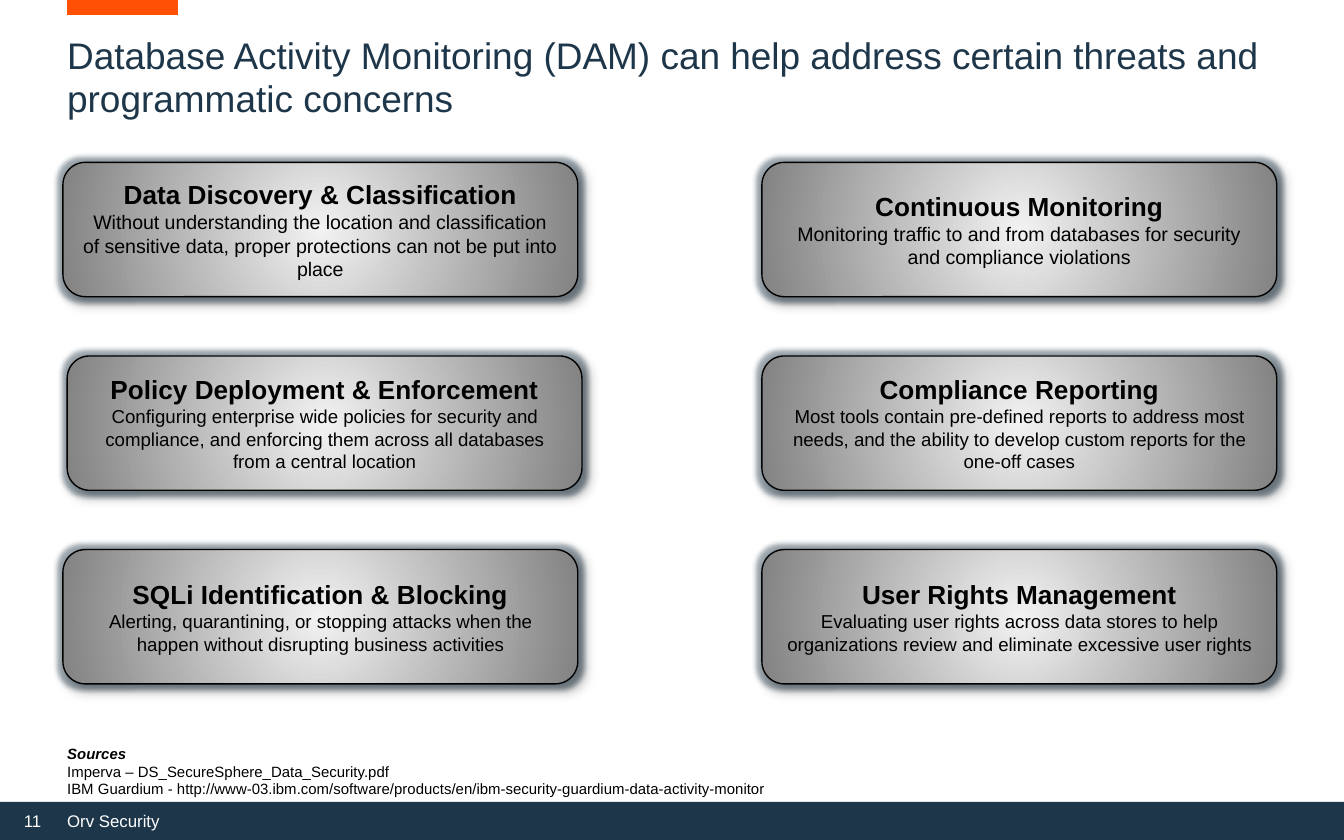
from lxml import etree
from pptx import Presentation
from pptx.dml.color import RGBColor
from pptx.enum.shapes import MSO_CONNECTOR, MSO_SHAPE
from pptx.enum.text import MSO_ANCHOR, PP_ALIGN
from pptx.oxml import parse_xml
from pptx.oxml.ns import nsdecls, qn
from pptx.util import Cm, Pt

NAVY = RGBColor(0x1D, 0x36, 0x49)
ORANGE = RGBColor(0xFF, 0x50, 0x04)
BLACK = RGBColor(0x00, 0x00, 0x00)
WHITE = RGBColor(0xFF, 0xFF, 0xFF)
CARD_CENTRE = RGBColor(0xF2, 0xF2, 0xF2)
CARD_EDGE = RGBColor(0x82, 0x82, 0x82)

LEFT_MARGIN = 1.27
CARD_TOP, CARD_PITCH = 3.07, 3.66
CARD_WIDTH, CARD_HEIGHT = 9.73, 2.54
RIGHT_COLUMN = 14.4

CARD_ROWS = [
    [
        (1.19, "Data Discovery & Classification",
         "Without understanding the location and classification of sensitive data, "
         "proper protections can not be put into place", 10.5),
        (RIGHT_COLUMN, "Continuous Monitoring",
         "Monitoring traffic to and from databases for security and compliance violations", 10.5),
    ],
    [
        (LEFT_MARGIN, "Policy Deployment & Enforcement",
         "Configuring enterprise wide policies for security and compliance, and enforcing "
         "them across all databases from a central location", 10),
        (RIGHT_COLUMN, "Compliance Reporting",
         "Most tools contain pre-defined reports to address most needs, and the ability "
         "to develop custom reports for the one-off cases", 10),
    ],
    [
        (1.19, "SQLi Identification & Blocking",
         "Alerting, quarantining, or stopping attacks when the happen without disrupting "
         "business activities", 10),
        (RIGHT_COLUMN, "User Rights Management",
         "Evaluating user rights across data stores to help organizations review and "
         "eliminate excessive user rights", 10),
    ],
]

SOURCES = [
    "Imperva – DS_SecureSphere_Data_Security.pdf",
    "IBM Guardium - http://www-03.ibm.com/software/products/en/"
    "ibm-security-guardium-data-activity-monitor",
]


def write(frame, text, size, color=BLACK, bold=False, italic=False,
          align=PP_ALIGN.LEFT, spacing=None, tabs=()):
    """Write one formatted paragraph, using the frame's empty first one if it is free."""
    first = frame.paragraphs[0]
    paragraph = frame.add_paragraph() if first.runs else first
    if tabs:
        tab_list = etree.SubElement(paragraph._p.get_or_add_pPr(), qn("a:tabLst"))
        for position, side in tabs:
            etree.SubElement(tab_list, qn("a:tab"), pos=str(Cm(position)), algn=side)
    paragraph.alignment = align
    paragraph.line_spacing = spacing
    run = paragraph.add_run()
    run.text = text
    run.font.name = "Arial"
    run.font.size = Pt(size)
    run.font.bold = bold
    run.font.italic = italic
    run.font.color.rgb = color


def add_text_area(slide, left, top, width, height, wrap=True, anchor=MSO_ANCHOR.TOP):
    """Add a text box without insets and return its frame."""
    frame = slide.shapes.add_textbox(Cm(left), Cm(top), Cm(width), Cm(height)).text_frame
    frame.margin_left = frame.margin_right = frame.margin_top = frame.margin_bottom = 0
    frame.word_wrap = wrap
    frame.vertical_anchor = anchor
    return frame


def add_footer(slide):
    """Add the dark footer bar with page number and department."""
    bar = slide.shapes.add_shape(MSO_SHAPE.RECTANGLE, 0, Cm(15.16), Cm(25.4), Cm(0.72))
    bar.shadow.inherit = False
    bar.fill.solid()
    bar.fill.fore_color.rgb = NAVY
    bar.line.fill.background()
    label = add_text_area(slide, 0.3, 15.21, 4.85, 0.51, False, MSO_ANCHOR.BOTTOM)
    write(label, "\t11\tOrv Security", 9, WHITE, spacing=0.9,
          tabs=[(0.48, "r"), (0.97, "l")])


def add_accent(slide):
    """Add the thick orange line at the top edge."""
    accent = slide.shapes.add_connector(
        MSO_CONNECTOR.STRAIGHT, Cm(LEFT_MARGIN), Cm(0.14), Cm(3.37), Cm(0.14))
    accent.line.color.rgb = ORANGE
    accent.line.width = Pt(8)
    etree.SubElement(accent._element.spPr, qn("a:effectLst"))


def style_card(card):
    """Give a card its radial fill, outline, glow and shadow."""
    card.shadow.inherit = False
    card.line.color.rgb = BLACK
    card.line.width = Pt(0.75)
    properties = card._element.spPr
    properties.find(qn("a:prstGeom")).addnext(parse_xml(
        f'<a:gradFill {nsdecls("a")} rotWithShape="1"><a:gsLst>'
        f'<a:gs pos="0"><a:srgbClr val="{CARD_CENTRE}"/></a:gs>'
        f'<a:gs pos="100000"><a:srgbClr val="{CARD_EDGE}"/></a:gs></a:gsLst>'
        '<a:path path="circle"><a:fillToRect l="50000" t="50000" r="50000" b="50000"/>'
        '</a:path></a:gradFill>'))
    effects = properties.find(qn("a:effectLst"))
    effects.append(parse_xml(
        f'<a:glow {nsdecls("a")} rad="{Pt(5)}"><a:srgbClr val="{NAVY}">'
        '<a:alpha val="40000"/></a:srgbClr></a:glow>'))
    effects.append(parse_xml(
        f'<a:outerShdw {nsdecls("a")} blurRad="{Pt(4)}" dist="{Pt(3)}" dir="2700000" '
        f'algn="tl" rotWithShape="0"><a:srgbClr val="{BLACK}">'
        '<a:alpha val="40000"/></a:srgbClr></a:outerShdw>'))


def add_card(slide, left, top, heading, detail, detail_size):
    """Add one rounded card with a heading and its explanation."""
    card = slide.shapes.add_shape(
        MSO_SHAPE.ROUNDED_RECTANGLE, Cm(left), Cm(top), Cm(CARD_WIDTH), Cm(CARD_HEIGHT))
    style_card(card)
    frame = card.text_frame
    frame.word_wrap = True
    frame.vertical_anchor = MSO_ANCHOR.MIDDLE
    write(frame, heading, 14, bold=True, align=PP_ALIGN.CENTER)
    write(frame, detail, detail_size, align=PP_ALIGN.CENTER)


def main():
    """Build the slide and save it."""
    presentation = Presentation()
    presentation.slide_width, presentation.slide_height = Cm(25.4), Cm(15.88)
    slide = presentation.slides.add_slide(presentation.slide_layouts[6])

    add_footer(slide)
    add_accent(slide)
    title = add_text_area(slide, LEFT_MARGIN, 0.64, 22.86, 0.97)
    write(title, "Database Activity Monitoring (DAM) can help address certain threats "
          "and programmatic concerns", 19.8, NAVY, spacing=Pt(23))

    for row, cards in enumerate(CARD_ROWS):
        for left, heading, detail, detail_size in cards:
            add_card(slide, left, CARD_TOP + row * CARD_PITCH, heading, detail, detail_size)

    sources = add_text_area(slide, LEFT_MARGIN, 14.07, 22.48, 1.02)
    write(sources, "Sources", 8, bold=True, italic=True)
    for source in SOURCES:
        write(sources, source, 8)

    presentation.save("out.pptx")


if __name__ == "__main__":
    main()
